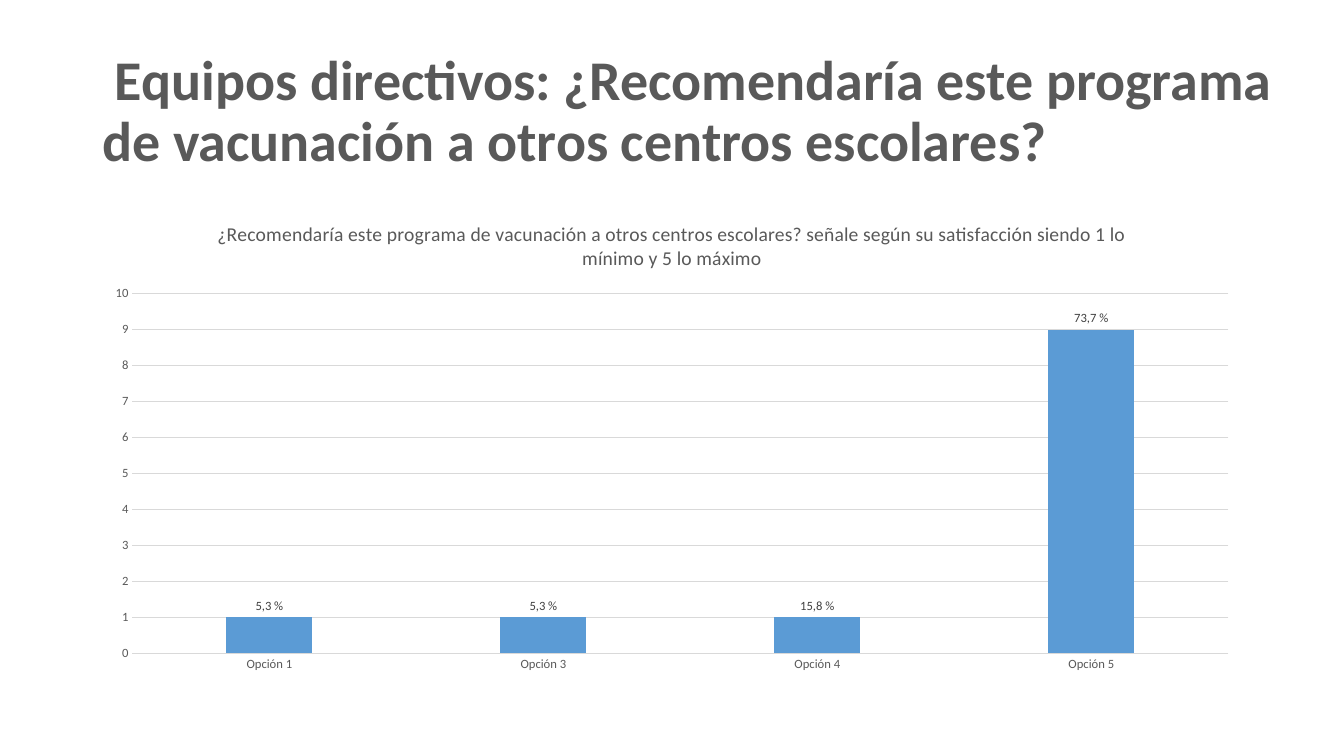
from pptx import Presentation
from pptx.chart.data import CategoryChartData
from pptx.dml.color import RGBColor
from pptx.enum.chart import XL_CHART_TYPE as ChartType, XL_LABEL_POSITION as LabelPosition
from pptx.enum.chart import XL_TICK_MARK as TickMark
from pptx.enum.text import MSO_ANCHOR as Anchor
from pptx.util import Cm, Pt

COLORS = {
    "heading": "595959",
    "label": "404040",
    "grid": "D9D9D9",
    "bar": "5B9BD5",
    "base": "000000",
}
FONT = "Calibri"
HEADING = "Equipos directivos: ¿Recomendaría este programa de vacunación a otros centros escolares?"
QUESTION = (
    "¿Recomendaría este programa de vacunación a otros centros escolares? "
    "señale según su satisfacción siendo 1 lo mínimo y 5 lo máximo"
)
ANSWERS = [
    ("Opción 1", 1, "5,3 %"),
    ("Opción 3", 1, "5,3 %"),
    ("Opción 4", 1, "15,8 %"),
    ("Opción 5", 9, "73,7 %"),
]


def color(name):
    return RGBColor.from_string(COLORS[name])


def style_font(font, size, color_name, bold=False):
    font.name = FONT
    font.size = Pt(size)
    font.bold = bold
    font.color.rgb = color(color_name)


def style_line(line):
    line.color.rgb = color("grid")
    line.width = Pt(0.75)


def add_heading(slide):
    heading = slide.shapes.add_textbox(Cm(2.33), Cm(1.01), Cm(30.86), Cm(3.68))
    frame = heading.text_frame
    frame.word_wrap = True
    frame.vertical_anchor = Anchor.MIDDLE
    paragraph = frame.paragraphs[0]
    paragraph.line_spacing = 0.9
    for text, bold in ((" ", False), (HEADING, True)):
        run = paragraph.add_run()
        run.text = text
        style_font(run.font, 40, "heading", bold)


def style_chart_title(chart):
    chart.has_title = True
    chart.chart_title.include_in_layout = False
    question = chart.chart_title.text_frame.paragraphs[0]
    question.text = QUESTION
    style_font(question.runs[0].font, 14, "heading")


def style_axes(chart):
    for axis in (chart.category_axis, chart.value_axis):
        axis.major_tick_mark = TickMark.NONE
        axis.minor_tick_mark = TickMark.NONE
        style_font(axis.tick_labels.font, 9, "heading")
    style_line(chart.category_axis.format.line)
    votes_axis = chart.value_axis
    votes_axis.minimum_scale = 0
    votes_axis.maximum_scale = 10
    votes_axis.major_unit = 1
    votes_axis.format.line.fill.background()
    style_line(votes_axis.major_gridlines.format.line)


def label_bars(votes):
    labels = votes.data_labels
    labels.show_value = True
    labels.position = LabelPosition.OUTSIDE_END
    style_font(labels.font, 9, "label")
    for index, (_, _, share) in enumerate(ANSWERS):
        label = votes.points[index].data_label
        paragraph = label.text_frame.paragraphs[0]
        paragraph.text = share
        style_font(paragraph.runs[0].font, 9, "label")
        label.position = LabelPosition.OUTSIDE_END


def add_answers_chart(slide):
    answers = CategoryChartData()
    answers.categories = [option for option, _, _ in ANSWERS]
    answers.add_series("Series 1", [count for _, count, _ in ANSWERS])
    chart = slide.shapes.add_chart(
        ChartType.COLUMN_CLUSTERED, Cm(2.33), Cm(5.08), Cm(29.21), Cm(12.09), answers
    ).chart
    style_font(chart.font, 10, "base")
    chart.has_legend = False
    style_chart_title(chart)
    style_axes(chart)
    plot = chart.plots[0]
    plot.gap_width = 219
    plot.overlap = -27
    plot.vary_by_categories = False
    votes = plot.series[0]
    votes.format.fill.solid()
    votes.format.fill.fore_color.rgb = color("bar")
    label_bars(votes)


def main():
    presentation = Presentation()
    presentation.slide_width = Cm(33.87)
    presentation.slide_height = Cm(19.05)
    slide = presentation.slides.add_slide(presentation.slide_layouts[6])
    add_heading(slide)
    add_answers_chart(slide)
    presentation.save("out.pptx")


if __name__ == "__main__":
    main()
